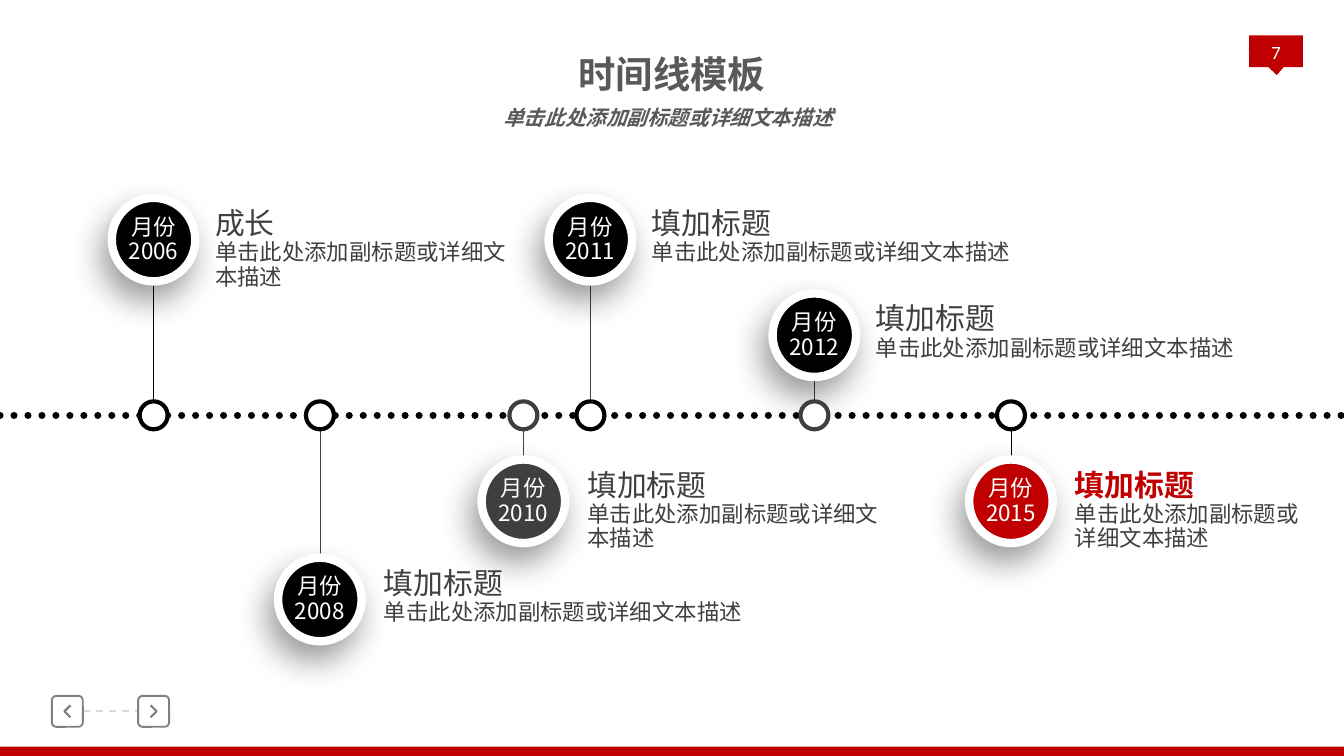
import lxml.etree
import pptx
import pptx.dml.color
import pptx.enum.dml
import pptx.enum.shapes
import pptx.enum.text
import pptx.oxml.ns
import pptx.util

Pt = pptx.util.Pt
qn = pptx.oxml.ns.qn
SHAPE = pptx.enum.shapes.MSO_SHAPE
DASH = pptx.enum.dml.MSO_LINE
ALIGN = pptx.enum.text.PP_ALIGN
ANCHOR = pptx.enum.text.MSO_ANCHOR
FONT = "Noto Sans CJK SC"
RED, BLACK, DARK, GREY, WHITE = "C00000", "000000", "404040", "808080", "FFFFFF"
DETAIL = "单击此处添加副标题或详细文本描述"
AXIS_Y, DISC, MARKER = 222.5, 44.8, 15


def rgb(value):
    return pptx.dml.color.RGBColor.from_string(value)


def assign(obj, values):
    for name, value in values.items():
        setattr(obj, name, value)


def place(sp, box):
    assign(sp, dict(zip(("left", "top", "width", "height"), map(Pt, box))))


def add_run(p, text, size, color, font=FONT, **style):
    r = p.add_run()
    r.text = text
    assign(r.font, {"size": Pt(size), "name": font, **style})
    r.font.color.rgb = rgb(color)
    lxml.etree.SubElement(r.font._element, qn("a:ea"), typeface=font)


def set_frame(tf, margins=(0, 0, 0, 0), **values):
    names = ("margin_left", "margin_top", "margin_right", "margin_bottom")
    assign(tf, {**dict(zip(names, map(Pt, margins))), **values})


def paint(sp, fill=None, line=None, width=1):
    sp.shadow.inherit = False
    for target, color in ((sp.fill, fill), (sp.line.fill, line)):
        if color:
            target.solid()
            target.fore_color.rgb = rgb(color)
        else:
            target.background()
    if line:
        sp.line.width = Pt(width)


def add_box(s, kind, box, fill=None, line=None, width=1):
    sp = s.shapes.add_shape(kind, *map(Pt, box))
    paint(sp, fill, line, width)
    return sp


def add_line(s, x1, y1, x2, y2, color, width, dash=None):
    straight = pptx.enum.shapes.MSO_CONNECTOR.STRAIGHT
    sp = s.shapes.add_connector(straight, *map(Pt, (x1, y1, x2, y2)))
    sp.line.color.rgb = rgb(color)
    sp.line.width = Pt(width)
    if dash:
        sp.line.dash_style = dash
    lxml.etree.SubElement(sp._element.spPr, qn("a:effectLst"))
    return sp


def add_soft_shadow(sp):
    effects = sp._element.spPr.find(qn("a:effectLst"))
    shadow = lxml.etree.SubElement(
        effects, qn("a:outerShdw"), blurRad=str(Pt(18)), dist=str(Pt(9)),
        dir=str(114 * 60000), algn="ctr", rotWithShape="0")
    color = lxml.etree.SubElement(shadow, qn("a:srgbClr"), val=BLACK)
    lxml.etree.SubElement(color, qn("a:alpha"), val="40000")


def add_heading(s, box):
    x, y, w, h = box
    title, subtitle = s.placeholders
    parts = (
        (title, (x, y, w, 24.5), "时间线模板", 20, "595959", {"bold": True}),
        (subtitle, (x, y + 25.2, w - 4, h - 25.2), DETAIL, 11, "58595B",
         {"bold": True, "italic": True}),
    )
    for sp, area, text, size, color, style in parts:
        place(sp, area)
        set_frame(sp.text_frame, vertical_anchor=ANCHOR.MIDDLE, word_wrap=False,
                  auto_size=pptx.enum.text.MSO_AUTO_SIZE.NONE)
        p = sp.text_frame.paragraphs[0]
        assign(p, {"alignment": ALIGN.CENTER, "space_before": Pt(0), "line_spacing": 1.0})
        add_run(p, text, size, color, **style)


def add_page_badge(s, box, number):
    x, y, w, h = box
    add_box(s, SHAPE.RECTANGLE, (x, y, w, 17), RED)
    tip = add_box(s, SHAPE.ISOSCELES_TRIANGLE, (x, y + 6.2, w, 15), RED)
    tip.rotation = 176.8
    sp = s.shapes.add_textbox(*map(Pt, (x, y - 3, w, h)))
    set_frame(sp.text_frame, (0, 0, 0, 3.6), vertical_anchor=ANCHOR.MIDDLE, word_wrap=True)
    p = sp.text_frame.paragraphs[0]
    p.alignment = ALIGN.CENTER
    add_run(p, number, 10, WHITE, "Calibri")


def add_navigation(s, box):
    x, y, w, h = box
    mid = y + h / 2
    add_line(s, x + h, mid, x + w - h, mid, "D9D9D9", 1, DASH.DASH)
    for left, side in ((x, -1), (x + w - h, 1)):
        sp = add_box(s, SHAPE.ROUNDED_RECTANGLE, (left, y, h, h), None, GREY)
        sp.adjustments[0] = 0.14
        cx = left + h / 2
        back, tip = cx - side * 1.6, cx + side * 1.6
        path = s.shapes.build_freeform(Pt(back), Pt(mid - 3.2))
        path.add_line_segments([(Pt(tip), Pt(mid)), (Pt(back), Pt(mid + 3.2))], close=False)
        paint(path.convert_to_shape(), None, GREY, 1.2)


def add_milestone(s, cx, top, width, year, title="填加标题", fill=BLACK,
                  ring=BLACK, stem=DARK, accent=False):
    above = top < AXIS_Y
    if above:
        add_line(s, cx, top + DISC, cx, AXIS_Y - MARKER / 2, stem, 0.25)
    else:
        add_line(s, cx, AXIS_Y + MARKER / 2, cx, top, stem, 0.25)

    disc = add_box(s, SHAPE.OVAL, (cx - DISC / 2, top, DISC, DISC), fill, WHITE, 4.5)
    add_soft_shadow(disc)
    set_frame(disc.text_frame, (0, 3.6, 0, 3.6), vertical_anchor=ANCHOR.MIDDLE, word_wrap=False)
    p = disc.text_frame.paragraphs[0]
    assign(p, {"alignment": ALIGN.CENTER, "line_spacing": Pt(13.2)})
    add_run(p, "月份", 12, WHITE)
    p.add_line_break()
    add_run(p, year, 12, WHITE)

    left = cx + (25.8 if above else 27.2)
    label = s.shapes.add_textbox(*map(Pt, (left, top + 6, width, 34)))
    tf = label.text_frame
    set_frame(tf, (7.2, 3.6, 7.2, 3.6), word_wrap=True)
    add_run(tf.paragraphs[0], title, 16, RED if accent else DARK, bold=accent)
    add_run(tf.add_paragraph(), DETAIL, 12, DARK)
    for p in tf.paragraphs:
        p.line_spacing = Pt(13.2)

    add_box(s, SHAPE.OVAL, (cx - MARKER / 2, AXIS_Y - MARKER / 2, MARKER, MARKER),
            WHITE, ring, 2.25)


def add_timeline(s, box):
    x, y, w, h = box
    axis = add_line(s, x, AXIS_Y, x + w, AXIS_Y, BLACK, 3.75, DASH.ROUND_DOT)
    axis.line._get_or_add_ln().set("cap", "rnd")
    milestones = (
        (82.3, 0, 181.4, "2006", {"title": "成长", "stem": BLACK}),
        (171.4, 192.8, 210, "2008", {}),
        (316.3, 0, 207.4, "2011", {}),
        (280.4, 140.2, 181.4, "2010", {"fill": "3F3F3F", "ring": "3F3F3F"}),
        (436.3, 51.2, 207.4, "2012", {"ring": DARK}),
        (541.6, 140.2, 141, "2015", {"fill": RED, "stem": BLACK, "accent": True}),
    )
    for cx, dy, width, year, style in milestones:
        add_milestone(s, x + cx, y + dy, width, year, **style)


def main():
    prs = pptx.Presentation()
    assign(prs, {"slide_width": Pt(720), "slide_height": Pt(405)})
    s = prs.slides.add_slide(prs.slide_layouts[0])
    add_box(s, SHAPE.RECTANGLE, (0, 400, 720, 5), RED)
    add_page_badge(s, (669.2, 19, 28.8, 27.4), "7")
    add_navigation(s, (27.8, 372.8, 62.8, 16.6))
    add_heading(s, (260, 27, 200, 46.5))
    add_timeline(s, (0, 106, 720, 240))
    prs.save("out.pptx")


if __name__ == "__main__":
    main()
